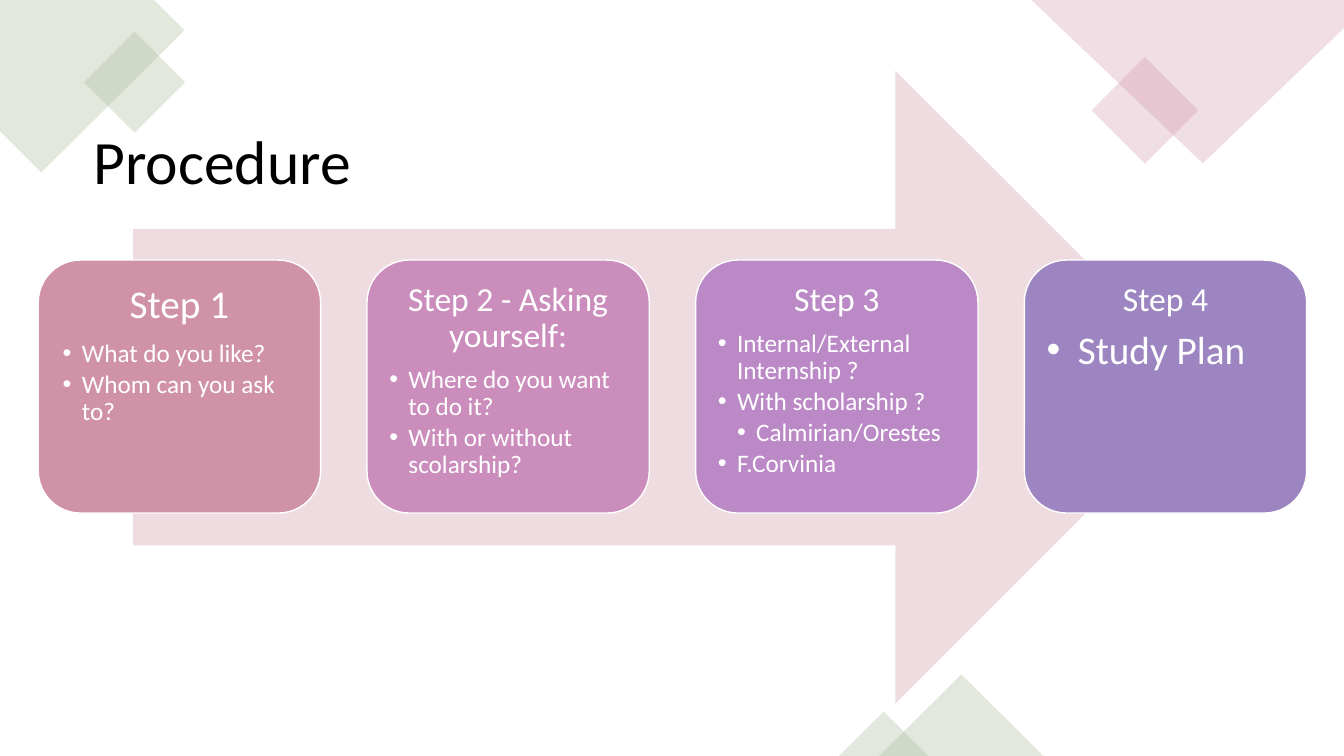
"""Build the Procedure slide: four steps on a large arrow."""
from lxml import etree
from pptx import Presentation
from pptx.dml.color import RGBColor
from pptx.enum.shapes import MSO_SHAPE
from pptx.enum.text import MSO_ANCHOR, PP_ALIGN
from pptx.oxml.ns import qn
from pptx.util import Inches, Pt

RECT, TRIANGLE = MSO_SHAPE.RECTANGLE, MSO_SHAPE.ISOSCELES_TRIANGLE
ARROW, CARD = MSO_SHAPE.RIGHT_ARROW, MSO_SHAPE.ROUNDED_RECTANGLE
TOP, MIDDLE = MSO_ANCHOR.TOP, MSO_ANCHOR.MIDDLE
LEFT, CENTER = PP_ALIGN.LEFT, PP_ALIGN.CENTER

THEME = {
    "font": "Calibri", "title": 44, "large": 28, "heading": 24, "body": 18,
    "black": "000000", "white": "FFFFFF", "sage": "A5B592", "rose": "D092A7",
    "arrow": "EEDCE1", "cards": ["D092A7", "CB8DBC", "BA89C6", "9C85C0"],
    "alpha": 30,
}

TITLE = "Procedure"
STEPS = [
    ("Step 1", "large", "body", 0.12, 0.19,
     [(1, "What do you like?"), (1, "Whom can you ask to?")]),
    ("Step 2 - Asking yourself:", "heading", "body", 0.1, 0.19,
     [(1, "Where do you want to do it?"), (1, "With or without scolarship?")]),
    ("Step 3", "heading", "body", 0.1, 0.19,
     [(1, "Internal/External Internship ?"), (1, "With scholarship ?"),
      (2, "Calmirian/Orestes"), (1, "F.Corvinia")]),
    ("Step 4", "heading", "large", 0.1, 0.31, [(1, "Study Plan")]),
]
CORNERS = [
    ("sage", [(0, 0), (1.53, 0), (1.83, 0.3), (0.41, 1.71), (0, 1.3)]),
    ("rose", [(13.33, 0), (10.23, 0), (11.93, 1.62), (13.33, 0.28)]),
]
ORNAMENTS = [
    (RECT, "sage", 315, (0.98, 0.46, 0.71, 0.71)),
    (RECT, "rose", 315, (10.98, 0.72, 0.75, 0.75)),
    (TRIANGLE, "sage", 0, (8.72, 6.69, 1.63, 0.81)),
    (TRIANGLE, "sage", 0, (8.32, 7.06, 0.89, 0.44)),
]
ARROW_BOX = (1.32, 0.7, 10.7, 6.28)
CARD_LEFT, CARD_TOP, CARD_W, CARD_H, CARD_PITCH = 0.38, 2.58, 2.8, 2.51, 3.26


def paint(sp, color, alpha=None):
    """Give a shape a flat fill without line or shadow."""
    sp.shadow.inherit = False
    sp.fill.solid()
    sp.fill.fore_color.rgb = RGBColor.from_string(color)
    sp.line.fill.background()
    if alpha:
        clr = sp.fill._xPr.find(".//" + qn("a:srgbClr"))
        etree.SubElement(clr, qn("a:alpha"), val=str(alpha * 1000))


def add_shape(s, kind, box, color, alpha=None):
    """Add a painted preset shape."""
    sp = s.shapes.add_shape(kind, *map(Inches, box))
    paint(sp, color, alpha)
    return sp


def write(p, text, size, color, align, after=0):
    """Write one run; the space after is a share of the type size."""
    p.alignment = align
    p.line_spacing = 0.9
    p.space_after = Pt(size * after)
    r = p.add_run()
    r.text = text
    r.font.name = THEME["font"]
    r.font.size = Pt(size)
    r.font.color.rgb = RGBColor.from_string(color)


def bullet(p, level, indent):
    """Set a hanging bullet at the given level."""
    p.level = level
    pPr = p._p.get_or_add_pPr()
    pPr.set("marL", str(Inches(indent * level)))
    pPr.set("indent", str(-Inches(indent)))
    etree.SubElement(pPr, qn("a:buFont"), typeface="Arial")
    etree.SubElement(pPr, qn("a:buChar"), char="•")


def add_card(s, i, step):
    """Add one step card with its heading and bullets."""
    heading, head_size, body_size, inset, indent, items = step
    box = (CARD_LEFT + i * CARD_PITCH, CARD_TOP, CARD_W, CARD_H)
    sp = add_shape(s, CARD, box, THEME["cards"][i])
    sp.line.color.rgb = RGBColor.from_string(THEME["white"])
    sp.line.width = Pt(1)
    tf = sp.text_frame
    tf.word_wrap = True
    tf.vertical_anchor = TOP
    tf.margin_left = tf.margin_right = Inches(inset)
    tf.margin_top = tf.margin_bottom = Inches(inset)
    write(tf.paragraphs[0], heading, THEME[head_size], THEME["white"], CENTER, 0.35)
    for level, text in items:
        p = tf.add_paragraph()
        write(p, text, THEME[body_size], THEME["white"], LEFT, 0.15)
        bullet(p, level, indent)


def main():
    """Lay out the slide and save it."""
    prs = Presentation()
    prs.slide_width, prs.slide_height = Inches(13.33), Inches(7.5)
    s = prs.slides.add_slide(prs.slide_layouts[6])
    for color, points in CORNERS:
        start, *rest = [(Inches(x), Inches(y)) for x, y in points]
        outline = s.shapes.build_freeform(*start)
        outline.add_line_segments(rest, close=True)
        paint(outline.convert_to_shape(), THEME[color], THEME["alpha"])
    for kind, color, rotation, box in ORNAMENTS:
        add_shape(s, kind, box, THEME[color], THEME["alpha"]).rotation = rotation
    title = s.shapes.add_textbox(*map(Inches, (0.83, 1.01, 3.03, 1.25)))
    tf = title.text_frame
    tf.word_wrap = True
    tf.vertical_anchor = MIDDLE
    write(tf.paragraphs[0], TITLE, THEME["title"], THEME["black"], LEFT)
    add_shape(s, ARROW, ARROW_BOX, THEME["arrow"])
    for i, step in enumerate(STEPS):
        add_card(s, i, step)
    prs.save("out.pptx")


if __name__ == "__main__":
    main()
